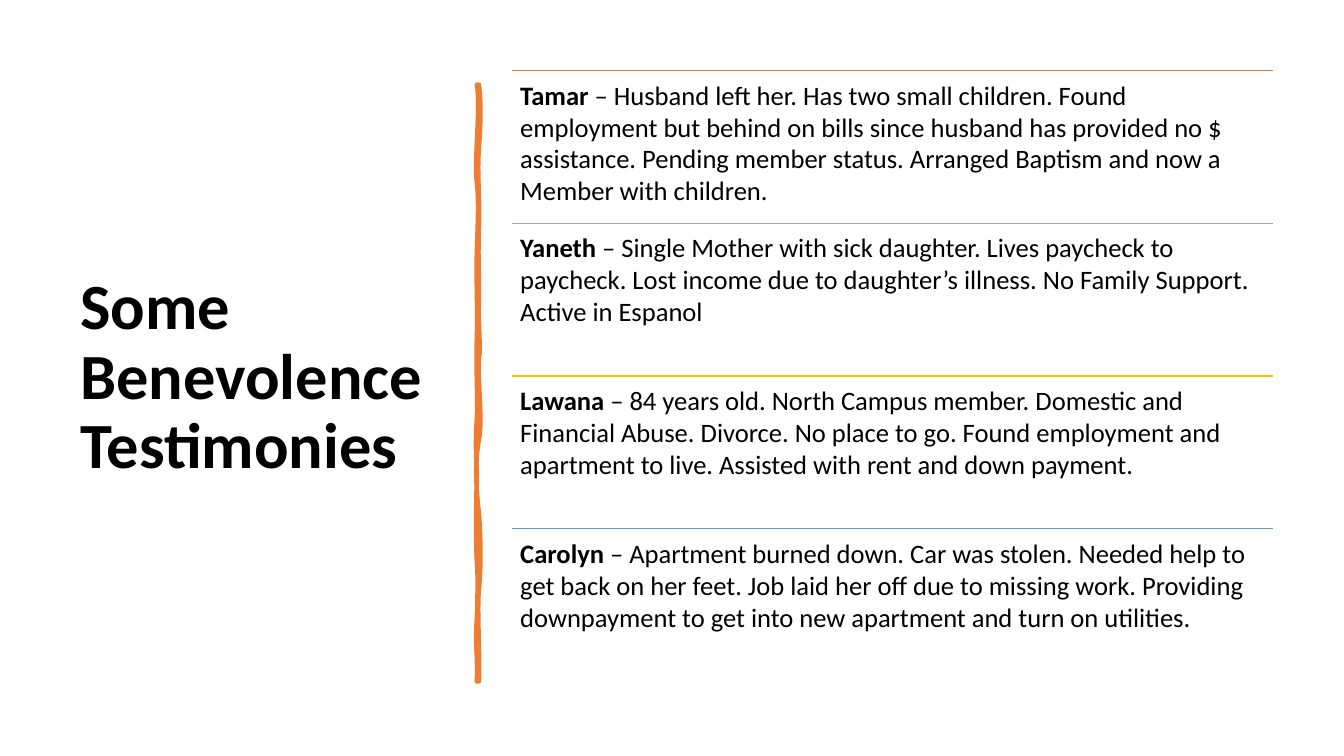
from typing import NamedTuple

from lxml import etree
from pptx import Presentation
from pptx.dml.color import RGBColor
from pptx.enum.shapes import MSO_CONNECTOR
from pptx.enum.text import MSO_ANCHOR
from pptx.oxml.ns import qn
from pptx.slide import Slide
from pptx.util import Inches, Pt

STRAIGHT = MSO_CONNECTOR.STRAIGHT
MIDDLE = MSO_ANCHOR.MIDDLE

BLACK = RGBColor(0x00, 0x00, 0x00)
ORANGE = RGBColor(0xED, 0x7D, 0x31)
GRAY = RGBColor(0xA5, 0xA5, 0xA5)
GOLD = RGBColor(0xFF, 0xC0, 0x00)
BLUE = RGBColor(0x5B, 0x9B, 0xD5)
FONT = "Calibri"

LIST_LEFT, LIST_TOP, LIST_WIDTH, LIST_HEIGHT = 5.08, 0.7, 7.55, 6.06
ROW_INSET = 0.08

Point = tuple[float, float]


class Testimony(NamedTuple):
    name: str
    story: str
    color: RGBColor


class Curve(NamedTuple):
    control_1: Point
    control_2: Point
    end: Point


TESTIMONIES = [
    Testimony("Tamar", "Husband left her. Has two small children. Found employment but behind on "
              "bills since husband has provided no $ assistance. Pending member status. "
              "Arranged Baptism and now a Member with children.", ORANGE),
    Testimony("Yaneth", "Single Mother with sick daughter. Lives paycheck to paycheck. Lost income "
              "due to daughter’s illness. No Family Support. Active in Espanol", GRAY),
    Testimony("Lawana", "84 years old. North Campus member. Domestic and Financial Abuse. Divorce. "
              "No place to go. Found employment and apartment to live. Assisted with rent and "
              "down payment.", GOLD),
    Testimony("Carolyn", "Apartment burned down. Car was stolen. Needed help to get back on her "
              "feet. Job laid her off due to missing work. Providing downpayment to get into new "
              "apartment and turn on utilities.", BLUE),
]
ROW_HEIGHT = LIST_HEIGHT / len(TESTIMONIES)

# Hand-drawn divider: down the right edge, then up the left edge
DIVIDER_START: Point = (4.75, 0.84)
DIVIDER_CURVES = [
    Curve((4.77, 1.02), (4.77, 1.19), (4.75, 1.46)),
    Curve((4.73, 1.73), (4.76, 1.95), (4.75, 2.26)),
    Curve((4.74, 2.57), (4.75, 2.62), (4.75, 2.94)),
    Curve((4.74, 3.25), (4.77, 3.42), (4.75, 3.56)),
    Curve((4.73, 3.7), (4.79, 4.14), (4.75, 4.36)),
    Curve((4.71, 4.57), (4.72, 4.84), (4.75, 5.1)),
    Curve((4.77, 5.36), (4.77, 5.64), (4.75, 5.84)),
    Curve((4.73, 6.03), (4.76, 6.5), (4.75, 6.76)),
    Curve((4.74, 6.76), (4.73, 6.76), (4.73, 6.76)),
    Curve((4.74, 6.46), (4.71, 6.44), (4.73, 6.13)),
    Curve((4.74, 5.83), (4.74, 5.7), (4.73, 5.57)),
    Curve((4.72, 5.44), (4.72, 4.95), (4.73, 4.77)),
    Curve((4.73, 4.59), (4.71, 4.45), (4.73, 4.15)),
    Curve((4.74, 3.86), (4.72, 3.73), (4.73, 3.35)),
    Curve((4.74, 2.98), (4.72, 2.81), (4.73, 2.5)),
    Curve((4.74, 2.18), (4.75, 2.0), (4.73, 1.81)),
    Curve((4.7, 1.63), (4.77, 1.04), (4.73, 0.84)),
]


def add_title(slide: Slide) -> None:
    box = slide.shapes.add_textbox(Inches(0.7), Inches(0.7), Inches(3.74), Inches(6.11))
    frame = box.text_frame
    frame.word_wrap = True
    frame.vertical_anchor = MIDDLE
    paragraph = frame.paragraphs[0]
    paragraph.text = "Some Benevolence Testimonies"
    paragraph.line_spacing = 0.9
    paragraph.font.name = FONT
    paragraph.font.size = Pt(46)
    paragraph.font.bold = True
    paragraph.font.color.rgb = BLACK


def add_divider(slide: Slide) -> None:
    start_x, start_y = DIVIDER_START
    builder = slide.shapes.build_freeform(Inches(start_x), Inches(start_y))
    builder.add_line_segments([(Inches(curve.end[0]), Inches(curve.end[1]))
                               for curve in DIVIDER_CURVES])
    shape = builder.convert_to_shape()

    # Bend each straight segment into its curve
    segments = list(shape.element.spPr.iter(qn("a:lnTo")))
    for segment, curve in zip(segments, DIVIDER_CURVES):
        bend = etree.Element(qn("a:cubicBezTo"))
        for x, y in curve:
            etree.SubElement(bend, qn("a:pt"), x=str(Inches(x) - shape.left),
                             y=str(Inches(y) - shape.top))
        segment.getparent().replace(segment, bend)

    shape.shadow.inherit = False
    shape.fill.solid()
    shape.fill.fore_color.rgb = ORANGE
    shape.line.color.rgb = ORANGE
    shape.line.width = Pt(3.25)
    etree.SubElement(shape.element.spPr.find(qn("a:ln")), qn("a:round"))


def add_testimony(slide: Slide, testimony: Testimony, top: float) -> None:
    # Rule above the row
    rule = slide.shapes.add_connector(STRAIGHT, Inches(LIST_LEFT), Inches(top),
                                      Inches(LIST_LEFT + LIST_WIDTH), Inches(top))
    rule.line.color.rgb = testimony.color
    rule.line.width = Pt(1)
    etree.SubElement(rule.element.spPr, qn("a:effectLst"))

    # Name and story
    box = slide.shapes.add_textbox(Inches(LIST_LEFT), Inches(top),
                                   Inches(LIST_WIDTH), Inches(ROW_HEIGHT))
    frame = box.text_frame
    frame.word_wrap = True
    frame.margin_left = frame.margin_right = Inches(ROW_INSET)
    frame.margin_top = frame.margin_bottom = Inches(ROW_INSET)
    paragraph = frame.paragraphs[0]
    paragraph.font.name = FONT
    paragraph.font.size = Pt(19)
    paragraph.font.color.rgb = BLACK
    name = paragraph.add_run()
    name.text = testimony.name
    name.font.bold = True
    story = paragraph.add_run()
    story.text = f" – {testimony.story}"


def main() -> None:
    presentation = Presentation()
    presentation.slide_width = Inches(13.33)
    presentation.slide_height = Inches(7.5)
    slide = presentation.slides.add_slide(presentation.slide_layouts[6])
    add_title(slide)
    add_divider(slide)
    for index, testimony in enumerate(TESTIMONIES):
        add_testimony(slide, testimony, LIST_TOP + index * ROW_HEIGHT)
    presentation.save("out.pptx")


if __name__ == "__main__":
    main()
